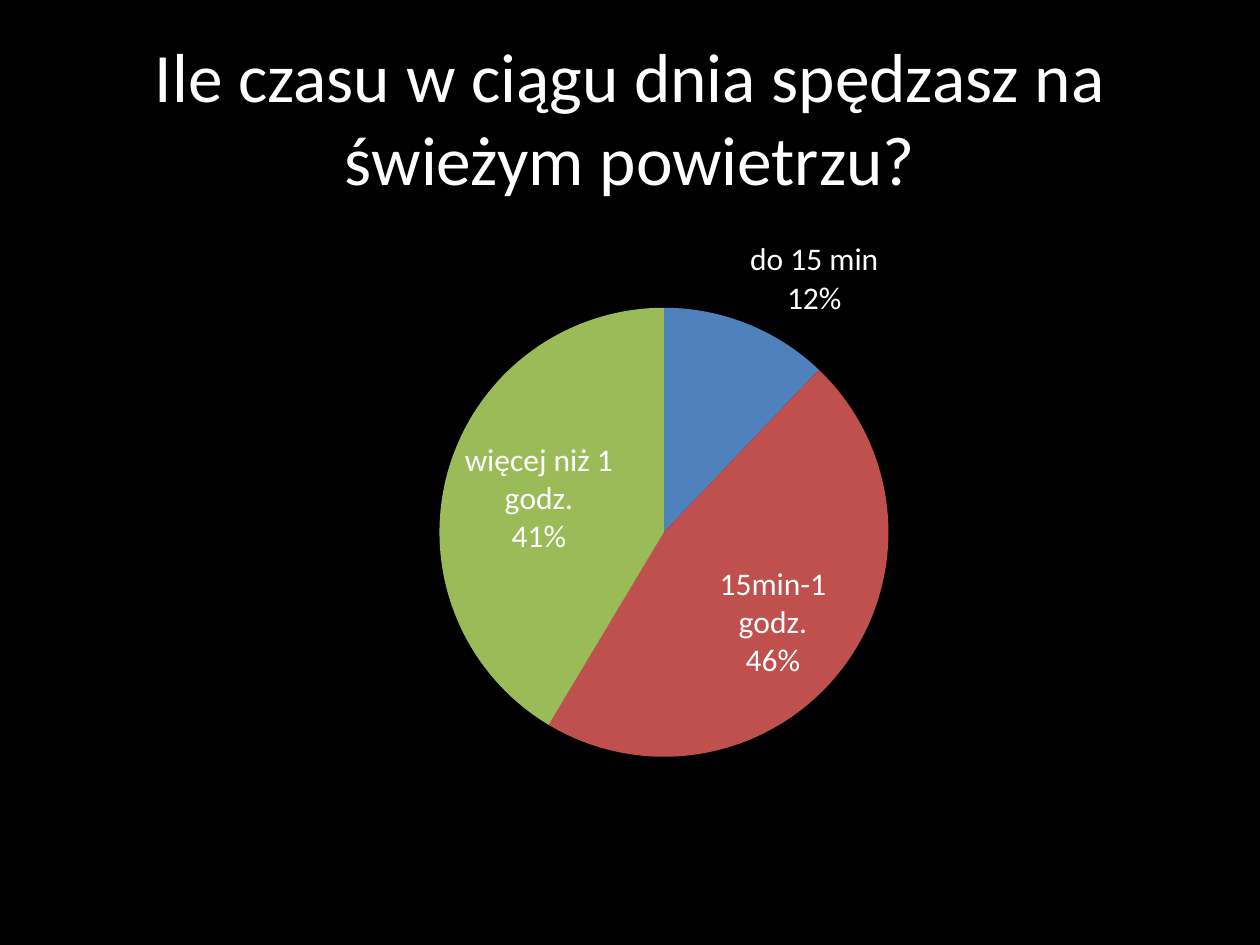
from lxml import etree
from pptx import Presentation
from pptx.chart.data import CategoryChartData
from pptx.dml.color import RGBColor
from pptx.enum.chart import XL_CHART_TYPE, XL_LABEL_POSITION
from pptx.enum.text import MSO_ANCHOR, PP_ALIGN
from pptx.oxml import parse_xml
from pptx.oxml.ns import nsdecls, qn
from pptx.util import Inches, Pt

PIE = XL_CHART_TYPE.PIE
BEST_FIT = XL_LABEL_POSITION.BEST_FIT
MIDDLE = MSO_ANCHOR.MIDDLE
CENTER = PP_ALIGN.CENTER

BLACK = RGBColor(0x00, 0x00, 0x00)
WHITE = RGBColor(0xFF, 0xFF, 0xFF)
BLUE = RGBColor(0x4F, 0x81, 0xBD)
RED = RGBColor(0xC0, 0x50, 0x4D)
GREEN = RGBColor(0x9B, 0xBB, 0x59)

FONT = "Calibri"
TITLE = "Ile czasu w ciągu dnia spędzasz na świeżym powietrzu?"
# Answer, share, slice colour
ANSWERS = [
    ("do 15 min", 12, BLUE),
    ("15min-1 godz.", 46, RED),
    ("więcej niż 1 godz.", 41, GREEN),
]


def format_font(font, size):
    font.name = FONT
    font.size = Pt(size)
    font.color.rgb = WHITE


def set_title(slide, text):
    title = slide.shapes.title
    title.left, title.top = Inches(0.5), Inches(0.3)
    title.width, title.height = Inches(9), Inches(1.25)
    frame = title.text_frame
    frame.word_wrap = True
    frame.vertical_anchor = MIDDLE
    paragraph = frame.paragraphs[0]
    paragraph.alignment = CENTER
    run = paragraph.add_run()
    run.text = text
    format_font(run.font, 39.6)


def place_plot(chart, **fractions):
    """Fix the plot area at the given fractions of the chart."""
    plot_area = chart.plots[0]._element.getparent()
    for old_layout in plot_area.findall(qn("c:layout")):
        plot_area.remove(old_layout)
    layout = parse_xml(
        f'<c:layout {nsdecls("c")}><c:manualLayout>'
        '<c:layoutTarget val="inner"/>'
        '<c:xMode val="edge"/><c:yMode val="edge"/>'
        "</c:manualLayout></c:layout>"
    )
    for name, value in fractions.items():
        etree.SubElement(layout[0], qn(f"c:{name}")).set("val", str(value))
    plot_area.insert(0, layout)


def format_labels(labels):
    labels.show_value = False
    labels.show_category_name = True
    labels.show_percentage = True
    labels.position = BEST_FIT
    format_font(labels.font, 18)
    # Percentage goes on its own line
    separator = etree.Element(qn("c:separator"))
    separator.text = "\n"
    labels._element.find(qn("c:showPercent")).getnext().addnext(separator)


def add_pie(slide, answers):
    data = CategoryChartData()
    data.categories = [name for name, _, _ in answers]
    data.add_series("Series 1", [share for _, share, _ in answers])
    chart = slide.shapes.add_chart(
        PIE, Inches(0.5), Inches(1.75), Inches(9), Inches(4.95), data
    ).chart
    chart.has_legend = False
    chart.has_title = False
    format_font(chart.font, 18)
    plot = chart.plots[0]
    plot.vary_by_categories = True
    series = plot.series[0]
    for index, (_, _, color) in enumerate(answers):
        fill = series.points[index].format.fill
        fill.solid()
        fill.fore_color.rgb = color
    format_labels(series.data_labels)
    place_plot(chart, x=0.33, y=0.14, w=0.4, h=0.72)


def main():
    presentation = Presentation()
    presentation.slide_width = Inches(10)
    presentation.slide_height = Inches(7.5)
    slide = presentation.slides.add_slide(presentation.slide_layouts[5])

    # Background
    background = slide.background.fill
    background.solid()
    background.fore_color.rgb = BLACK

    # Question and answers
    set_title(slide, TITLE)
    add_pie(slide, ANSWERS)
    presentation.save("out.pptx")


if __name__ == "__main__":
    main()
